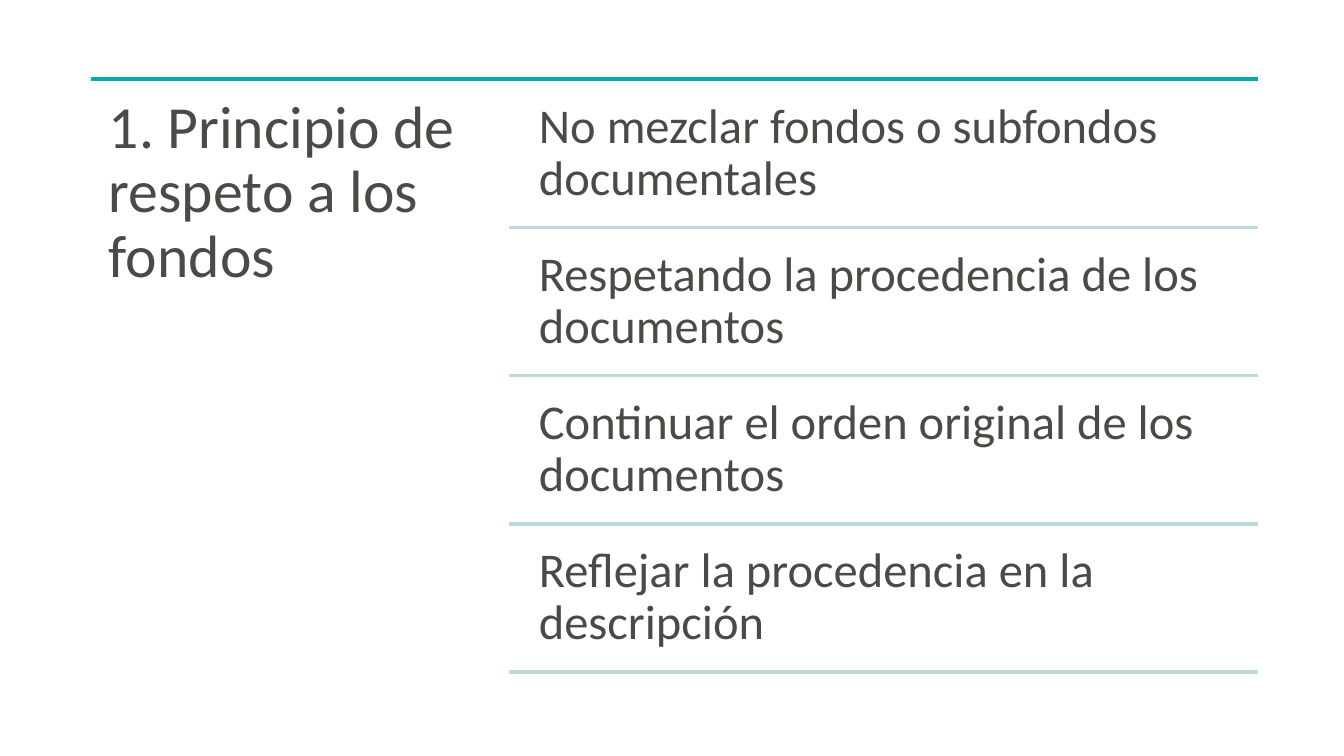
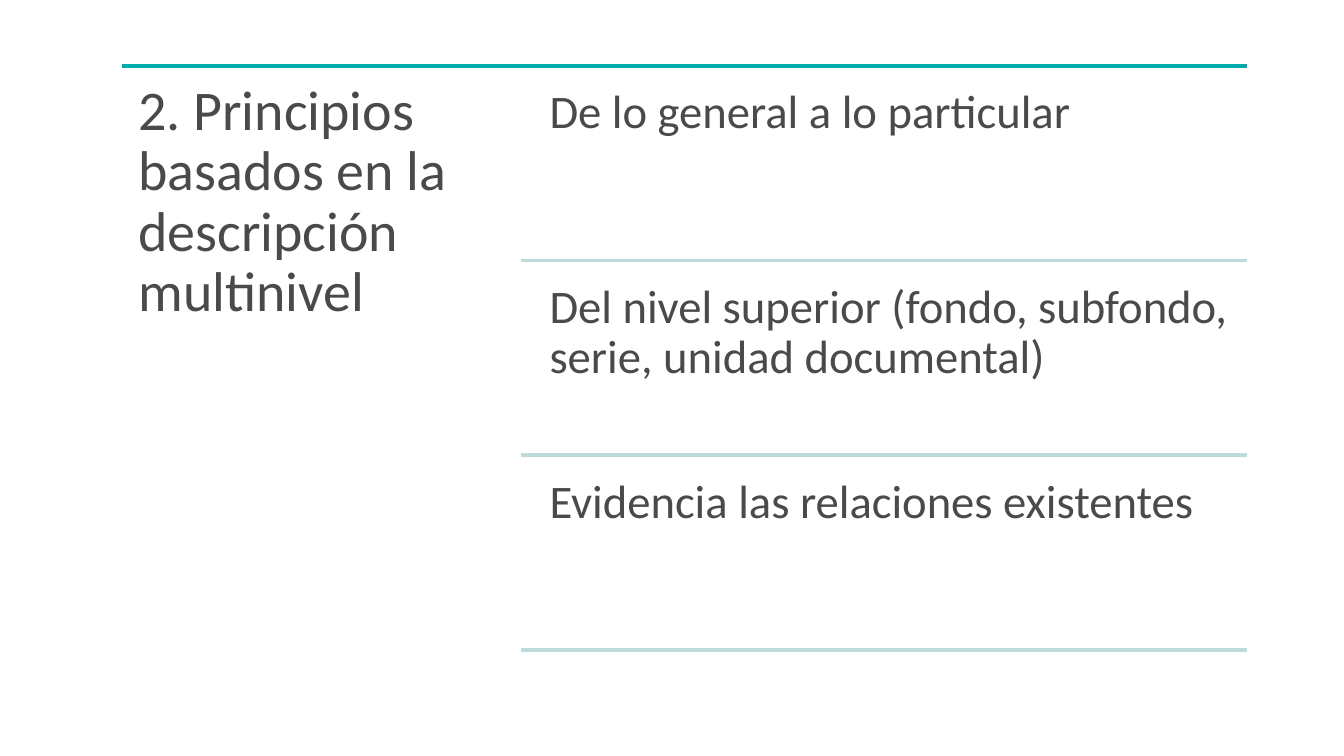
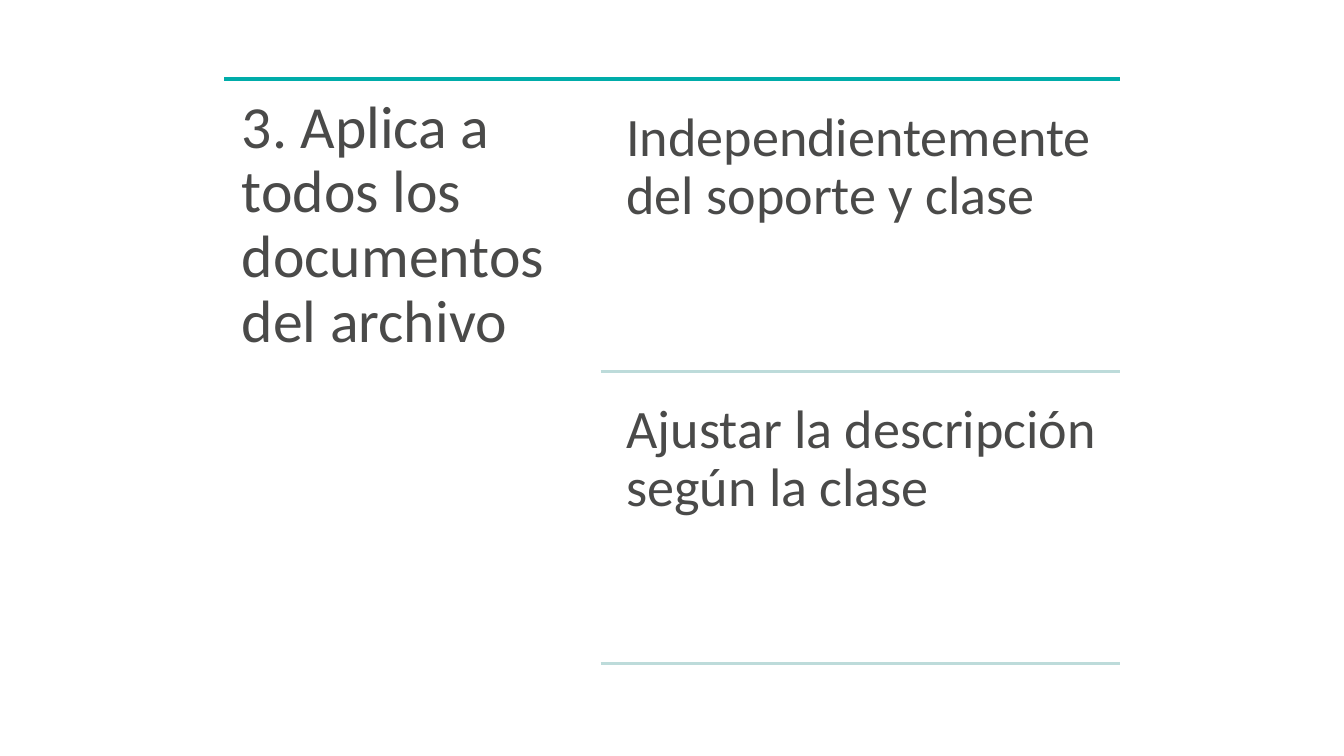
from dataclasses import dataclass

from pptx import Presentation
from pptx import util as u
from pptx.dml.color import RGBColor
from pptx.enum import shapes, text
from pptx.oxml.ns import qn
from lxml import etree


@dataclass(frozen=True)
class Theme:
    font: str = "Calibri"
    ink: str = "4A4A49"
    title_rule: str = "00ACA9"
    point_rule: str = "BDDBDA"
    rule_width: float = 2
    line_spacing: float = 0.9


THEME = Theme()
SLIDE_WIDTH = 10
SLIDE_HEIGHT = SLIDE_WIDTH * 9 / 16
GAP_RATIO = 0.05  # space above each point, as a share of its row height

# Lengths are in inches, sizes in points.
PRINCIPLES = [
    {
        "title": "1. Principio de respeto a los fondos",
        "points": [
            "No mezclar fondos o subfondos documentales",
            "Respetando la procedencia de los documentos",
            "Continuar el orden original de los documentos",
            "Reflejar la procedencia en la descripción",
        ],
        "left": 0.68, "right": 9.36, "top": 0.59, "height": 4.46,
        "title_width": 3.11, "indent": 0.11, "row": 1.05,
        "title_size": 32, "title_inset": 0.13,
        "point_size": 26, "point_inset": 0.11,
    },
    {
        "title": "2. Principios basados en la descripción multinivel",
        "points": [
            "De lo general a lo particular",
            "Del nivel superior (fondo, subfondo, serie, unidad documental)",
            "Evidencia las relaciones existentes",
        ],
        "left": 0.91, "right": 9.28, "top": 0.49, "height": 4.23,
        "title_width": 2.97, "indent": 0.11, "row": 1.38,
        "title_size": 30, "title_inset": 0.12,
        "point_size": 25, "point_inset": 0.1,
    },
    {
        "title": "3. Aplica a todos los documentos del archivo",
        "points": [
            "Independientemente del soporte y clase",
            "Ajustar la descripción según la clase",
        ],
        "left": 1.67, "right": 8.33, "top": 0.59, "height": 4.44,
        "title_width": 2.8, "indent": 0.07, "row": 2.07,
        "title_size": 32, "title_inset": 0.13,
        "point_size": 29, "point_inset": 0.12,
    },
]


def add_text(slide, content, left, top, width, height, *, size, inset):
    box = slide.shapes.add_textbox(*map(u.Inches, (left, top, width, height)))
    frame = box.text_frame
    frame.word_wrap = True
    frame.vertical_anchor = text.MSO_ANCHOR.TOP
    frame.margin_left = frame.margin_right = u.Inches(inset)
    frame.margin_top = frame.margin_bottom = u.Inches(inset)
    paragraph = frame.paragraphs[0]
    paragraph.line_spacing = THEME.line_spacing
    run = paragraph.add_run()
    run.text = content
    run.font.name = THEME.font
    run.font.size = u.Pt(size)
    run.font.color.rgb = RGBColor.from_string(THEME.ink)


def add_rule(slide, left, right, top, color):
    rule = slide.shapes.add_connector(
        shapes.MSO_CONNECTOR.STRAIGHT, *map(u.Inches, (left, top, right, top))
    )
    rule.line.color.rgb = RGBColor.from_string(color)
    rule.line.width = u.Pt(THEME.rule_width)
    etree.SubElement(rule._element.spPr, qn("a:effectLst"))


def add_principle(presentation, principle):
    """Add a slide with the title on the left and ruled points on the right."""
    slide = presentation.slides.add_slide(presentation.slide_layouts[6])
    left, right, top = (principle[key] for key in ("left", "right", "top"))
    row = principle["row"]
    gap = row * GAP_RATIO
    points_left = left + principle["title_width"]
    text_left = points_left + principle["indent"]

    add_rule(slide, left, right, top, THEME.title_rule)
    add_text(slide, principle["title"], left, top, principle["title_width"],
             principle["height"], size=principle["title_size"],
             inset=principle["title_inset"])

    for index, point in enumerate(principle["points"]):
        row_top = top + gap + index * (row + gap)
        add_text(slide, point, text_left, row_top, right - text_left, row,
                 size=principle["point_size"], inset=principle["point_inset"])
        add_rule(slide, points_left, right, row_top + row, THEME.point_rule)


def main():
    presentation = Presentation()
    presentation.slide_width = u.Inches(SLIDE_WIDTH)
    presentation.slide_height = u.Inches(SLIDE_HEIGHT)
    for principle in PRINCIPLES:
        add_principle(presentation, principle)
    presentation.save("out.pptx")


if __name__ == "__main__":
    main()
